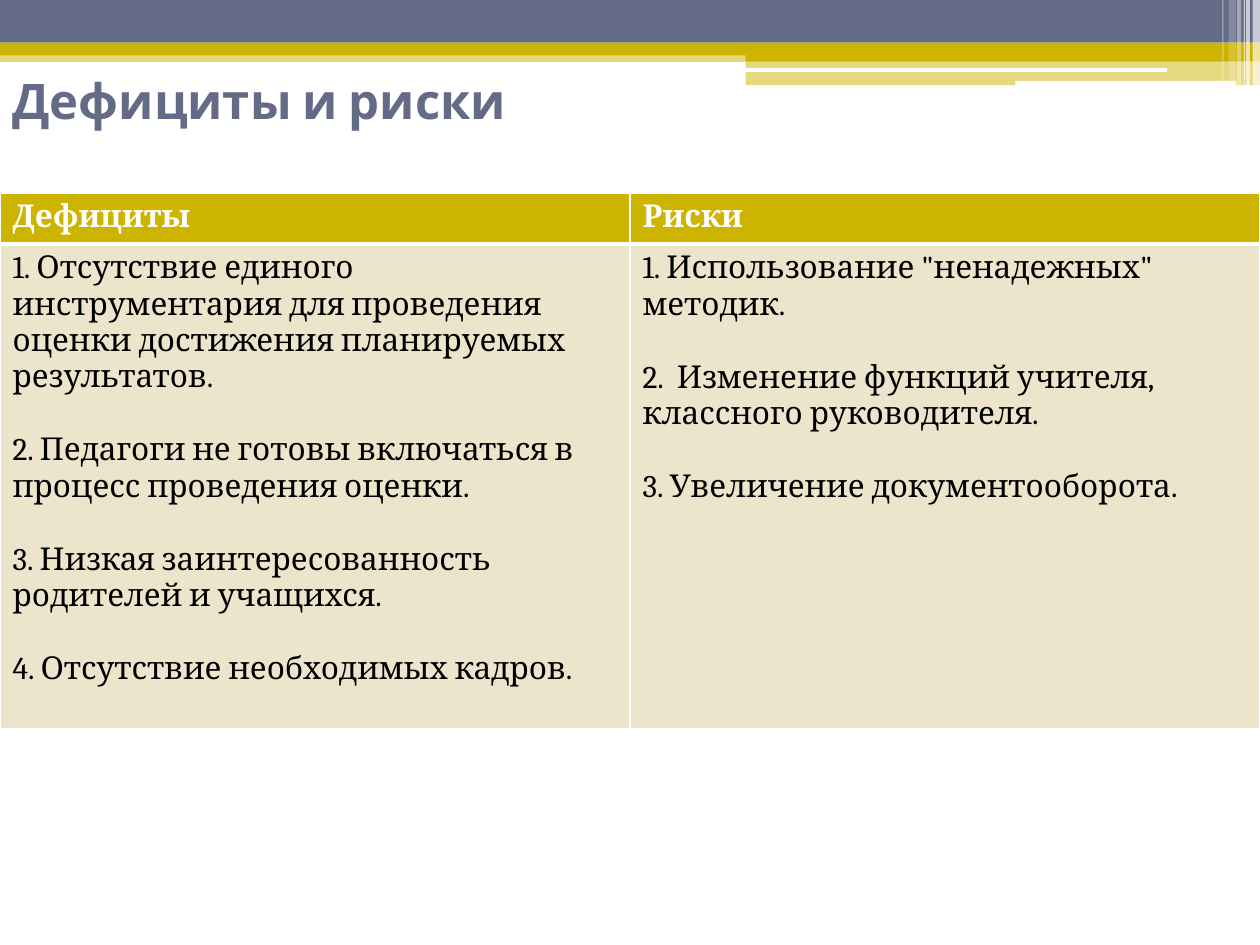
from lxml import etree
from pptx import Presentation
from pptx.dml.color import RGBColor
from pptx.enum.shapes import MSO_SHAPE
from pptx.enum.text import MSO_ANCHOR, PP_ALIGN
from pptx.oxml.ns import qn
from pptx.util import Cm, Pt

RECT, ROUNDED = MSO_SHAPE.RECTANGLE, MSO_SHAPE.ROUNDED_RECTANGLE
MIDDLE, LEFT = MSO_ANCHOR.MIDDLE, PP_ALIGN.LEFT
SLATE, GOLD, CREAM, WHITE, BLACK = "646B86", "CCB400", "ECE5CC", "FFFFFF", "000000"
WIDTH, HEIGHT = 25.4, 19.05

BANDS = [
    (RECT, 0, 1.02, WIDTH, 0.23, GOLD, 50),
    (RECT, 0, 0, WIDTH, 0.86, SLATE, 100),
    (RECT, 0, 0.86, WIDTH, 0.26, GOLD, 100),
    (RECT, 15.03, 0.98, 10.37, 0.25, GOLD, 100),
    (RECT, 15.03, 1.12, 10.37, 0.6, GOLD, 50),
    (ROUNDED, 15.02, 1.37, 8.51, 0.08, WHITE, 100),
    (ROUNDED, 20.47, 1.63, 4.45, 0.1, WHITE, 100),
]
# left, width, height, opacity
STRIPES = [
    (25.25, 0.15, 1.73, 65),
    (25.12, 0.08, 1.73, 65),
    (25.07, 0.03, 1.73, 60),
    (24.94, 0.08, 1.73, 40),
    (24.77, 0.15, 1.63, 20),
    (24.64, 0.03, 1.63, 30),
]
COLUMNS = {
    "Дефициты": [
        "1. Отсутствие единого инструментария для проведения оценки достижения планируемых результатов.",
        "2. Педагоги не готовы включаться в процесс проведения оценки.",
        "3. Низкая заинтересованность родителей и учащихся.",
        "4. Отсутствие необходимых кадров.",
    ],
    "Риски": [
        '1. Использование "ненадежных" методик.',
        "2.  Изменение функций учителя, классного руководителя.",
        "3. Увеличение документооборота.",
    ],
}
TITLE_FONT = {"name": "Cabin", "size": Pt(28), "bold": True}
HEAD_FONT = {"name": "Cambria", "size": Pt(18), "bold": True}
BODY_FONT = {"name": "Cambria", "size": Pt(18), "bold": False}


def rgb(color):
    """Turn a hex string into a colour."""
    return RGBColor.from_string(color)


def format_font(font, values, color):
    """Apply a dict of font values and a colour."""
    for name, value in values.items():
        setattr(font, name, value)
    font.color.rgb = rgb(color)


def add_band(slide, kind, left, top, width, height, color, opacity):
    """Add a borderless bar with the given opacity in percent."""
    sp = slide.shapes.add_shape(kind, Cm(left), Cm(top), Cm(width), Cm(height))
    sp.shadow.inherit = False
    sp.line.fill.background()
    sp.fill.solid()
    sp.fill.fore_color.rgb = rgb(color)
    if opacity < 100:
        clr = sp.fill._xPr.find(".//" + qn("a:srgbClr"))
        etree.SubElement(clr, qn("a:alpha"), val=str(opacity * 1000))


def add_title(slide, text):
    """Place and format the title placeholder."""
    sp = slide.shapes.title
    sp.left, sp.top, sp.width, sp.height = Cm(0), Cm(0.53), Cm(22.86), Cm(2.97)
    tf = sp.text_frame
    tf.vertical_anchor = MIDDLE
    p = tf.paragraphs[0]
    p.alignment = LEFT
    r = p.add_run()
    r.text = text
    format_font(r.font, TITLE_FONT, SLATE)


def set_borders(cell, widths):
    """Draw white cell borders from a dict of side to points."""
    tc_pr = cell._tc.get_or_add_tcPr()
    for i, (side, width) in enumerate(widths.items()):
        ln = etree.Element(qn("a:ln" + side), w=str(Pt(width)))
        fill = etree.SubElement(ln, qn("a:solidFill"))
        etree.SubElement(fill, qn("a:srgbClr"), val=WHITE)
        tc_pr.insert(i, ln)


def fill_cell(cell, lines, values, color, background, widths):
    """Write spaced paragraphs into a cell and style it."""
    cell.fill.solid()
    cell.fill.fore_color.rgb = rgb(background)
    set_borders(cell, widths)
    tf = cell.text_frame
    for i, line in enumerate(lines):
        p = tf.add_paragraph() if i else tf.paragraphs[0]
        if i:
            p.space_before = Pt(21)
        r = p.add_run()
        r.text = line
        format_font(r.font, values, color)


def add_comparison(slide, columns):
    """Add a table with a header and one body cell per column."""
    head_height, body_height = 1.03, 9.77
    table = slide.shapes.add_table(
        2, len(columns), Cm(0), Cm(3.89), Cm(WIDTH), Cm(head_height + body_height)
    ).table
    table.rows[0].height, table.rows[1].height = Cm(head_height), Cm(body_height)
    for i, (heading, items) in enumerate(columns.items()):
        fill_cell(table.cell(0, i), [heading], HEAD_FONT, WHITE, GOLD,
                  {"L": 1, "R": 1, "T": 1, "B": 3})
        fill_cell(table.cell(1, i), items, BODY_FONT, BLACK, CREAM,
                  {"L": 1, "R": 1, "T": 3, "B": 1})


def main():
    """Build the slide and save it."""
    prs = Presentation()
    prs.slide_width, prs.slide_height = Cm(WIDTH), Cm(HEIGHT)
    slide = prs.slides.add_slide(prs.slide_layouts[5])
    for band in BANDS:
        add_band(slide, *band)
    for left, width, height, opacity in STRIPES:
        add_band(slide, RECT, left, 0, width, height, WHITE, opacity)
    add_title(slide, "Дефициты и риски")
    add_comparison(slide, COLUMNS)
    prs.save("out.pptx")


if __name__ == "__main__":
    main()
